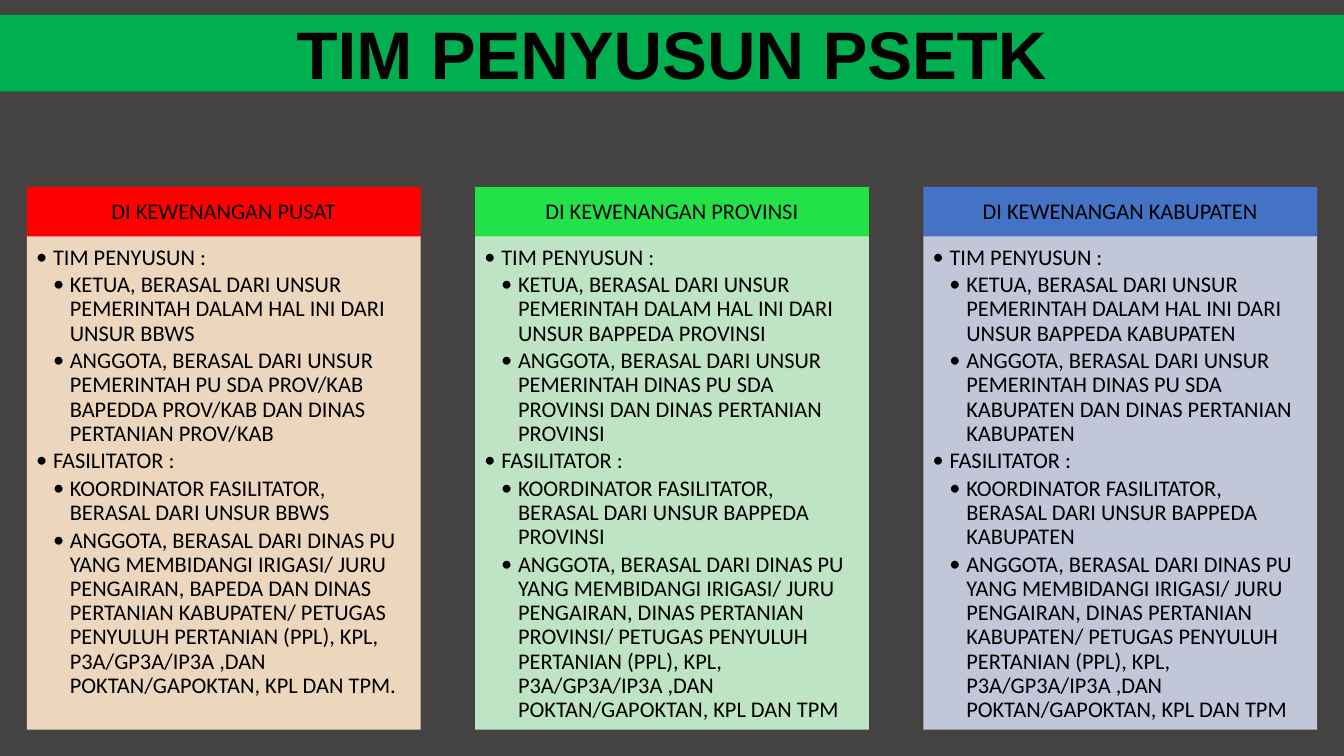
from lxml import etree
from pptx import Presentation, util as u
from pptx.dml.color import RGBColor
from pptx.enum import lang, shapes, text
from pptx.oxml import ns

HUES = {"back": "444342", "banner": "00B050", "ink": "000000"}
PAGE, LEFT, WIDE = 10, 0.2, 2.93
STEP = (PAGE - 2 * LEFT - WIDE) / 2
DENT = u.Inches(1 / 8)


def crew(area):
    return [
        (0, "TIM PENYUSUN :"),
        (1, "KETUA, BERASAL DARI UNSUR PEMERINTAH DALAM HAL INI DARI "
            f"UNSUR BAPPEDA {area}"),
        (1, f"ANGGOTA, BERASAL DARI UNSUR PEMERINTAH DINAS PU SDA {area} "
            f"DAN DINAS PERTANIAN {area}"),
        (0, "FASILITATOR :"),
        (1, f"KOORDINATOR FASILITATOR, BERASAL DARI UNSUR BAPPEDA {area}"),
        (1, "ANGGOTA, BERASAL DARI DINAS PU YANG MEMBIDANGI IRIGASI/ JURU "
            f"PENGAIRAN, DINAS PERTANIAN {area}/ PETUGAS PENYULUH PERTANIAN "
            "(PPL), KPL, P3A/GP3A/IP3A ,DAN POKTAN/GAPOKTAN, KPL DAN TPM"),
    ]


CENTRAL = [
    (0, "TIM PENYUSUN :"),
    (1, "KETUA, BERASAL DARI UNSUR PEMERINTAH DALAM HAL INI DARI UNSUR BBWS"),
    (1, "ANGGOTA, BERASAL DARI UNSUR PEMERINTAH PU SDA PROV/KAB BAPEDDA "
        "PROV/KAB DAN DINAS PERTANIAN PROV/KAB"),
    (0, "FASILITATOR :"),
    (1, "KOORDINATOR FASILITATOR, BERASAL DARI UNSUR BBWS"),
    (1, "ANGGOTA, BERASAL DARI DINAS PU YANG MEMBIDANGI IRIGASI/ JURU "
        "PENGAIRAN, BAPEDA DAN DINAS PERTANIAN KABUPATEN/ PETUGAS PENYULUH "
        "PERTANIAN (PPL), KPL, P3A/GP3A/IP3A ,DAN POKTAN/GAPOKTAN, KPL DAN "
        "TPM."),
]

TEAMS = [
    ("PUSAT", "FF0000", "FFE8CC", CENTRAL),
    ("PROVINSI", "23E148", "CCF6D3", crew("PROVINSI")),
    ("KABUPATEN", "4472C4", "CFD6EA", crew("KABUPATEN")),
]


class Deck:
    def __init__(self, wide, high):
        self.show = Presentation()
        self.show.slide_width = u.Inches(wide)
        self.show.slide_height = u.Inches(high)
        self.slide = self.show.slides.add_slide(self.show.slide_layouts[5])
        self.paint(self.slide.background, HUES["back"])

    def paint(self, item, hue):
        item.fill.solid()
        item.fill.fore_color.rgb = RGBColor.from_string(hue)

    def style(self, para, size, face, bold=False):
        font = para.font
        font.size, font.name, font.bold = u.Pt(size), face, bold
        font.color.rgb = RGBColor.from_string(HUES["ink"])
        for run in para.runs:
            run.font.language_id = lang.MSO_LANGUAGE_ID.INDONESIAN

    def inset(self, frame, left, top, right, low):
        frame.word_wrap = True
        frame.margin_left, frame.margin_top = u.Inches(left), u.Inches(top)
        frame.margin_right, frame.margin_bottom = u.Inches(right), u.Inches(low)

    def title(self, words, *box):
        bar = self.slide.shapes.title
        bar.left, bar.top, bar.width, bar.height = map(u.Inches, box)
        self.paint(bar, HUES["banner"])
        frame = bar.text_frame
        frame.text = words
        frame.auto_size = text.MSO_AUTO_SIZE.NONE
        frame.vertical_anchor = text.MSO_ANCHOR.MIDDLE
        para = frame.paragraphs[0]
        para.alignment = text.PP_ALIGN.CENTER
        self.style(para, 36, "Arial", True)

    def block(self, hue, *box):
        rect = self.slide.shapes.add_shape(
            shapes.MSO_SHAPE.RECTANGLE, *map(u.Inches, box))
        rect.shadow.inherit = False
        rect.line.fill.background()
        self.paint(rect, hue)
        return rect

    def head(self, words, hue, *box):
        frame = self.block(hue, *box).text_frame
        self.inset(frame, 0.09, 0.05, 0.09, 0.05)
        frame.vertical_anchor = text.MSO_ANCHOR.MIDDLE
        para = frame.paragraphs[0]
        para.text = words
        para.alignment = text.PP_ALIGN.CENTER
        para.line_spacing = 0.9
        self.style(para, 12, "Calibri")

    def panel(self, items, hue, *box):
        rect = self.block(hue, *box)
        tint = rect.fill._xPr.find(".//" + ns.qn("a:srgbClr"))
        etree.SubElement(tint, ns.qn("a:alpha"), val="90000")
        frame = rect.text_frame
        self.inset(frame, 0.07, 0.07, 0.09, 0.1)
        frame.vertical_anchor = text.MSO_ANCHOR.TOP
        for spot, (level, words) in enumerate(items):
            para = frame.add_paragraph() if spot else frame.paragraphs[0]
            para.text = words
            para.level = level
            para.alignment = text.PP_ALIGN.LEFT
            para.line_spacing = 0.9
            para.space_after = u.Pt(1.8)
            self.bullet(para, level)
            self.style(para, 12, "Calibri")

    def bullet(self, para, level):
        props = para._p.get_or_add_pPr()
        props.set("marL", str(DENT * (level + 1)))
        props.set("indent", str(-DENT))
        etree.SubElement(props, ns.qn("a:buFont"), typeface="Calibri")
        etree.SubElement(props, ns.qn("a:buChar"), char="•")


def main():
    deck = Deck(PAGE, PAGE * 9 / 16)
    deck.title("TIM PENYUSUN PSETK", 0, 0.11, PAGE, 0.57)
    for col, (area, dark, pale, items) in enumerate(TEAMS):
        left = LEFT + col * STEP
        deck.head(f"DI KEWENANGAN {area}", dark, left, 1.39, WIDE, 0.38)
        deck.panel(items, pale, left, 1.76, WIDE, 3.67)
    deck.show.save("out.pptx")


if __name__ == "__main__":
    main()
